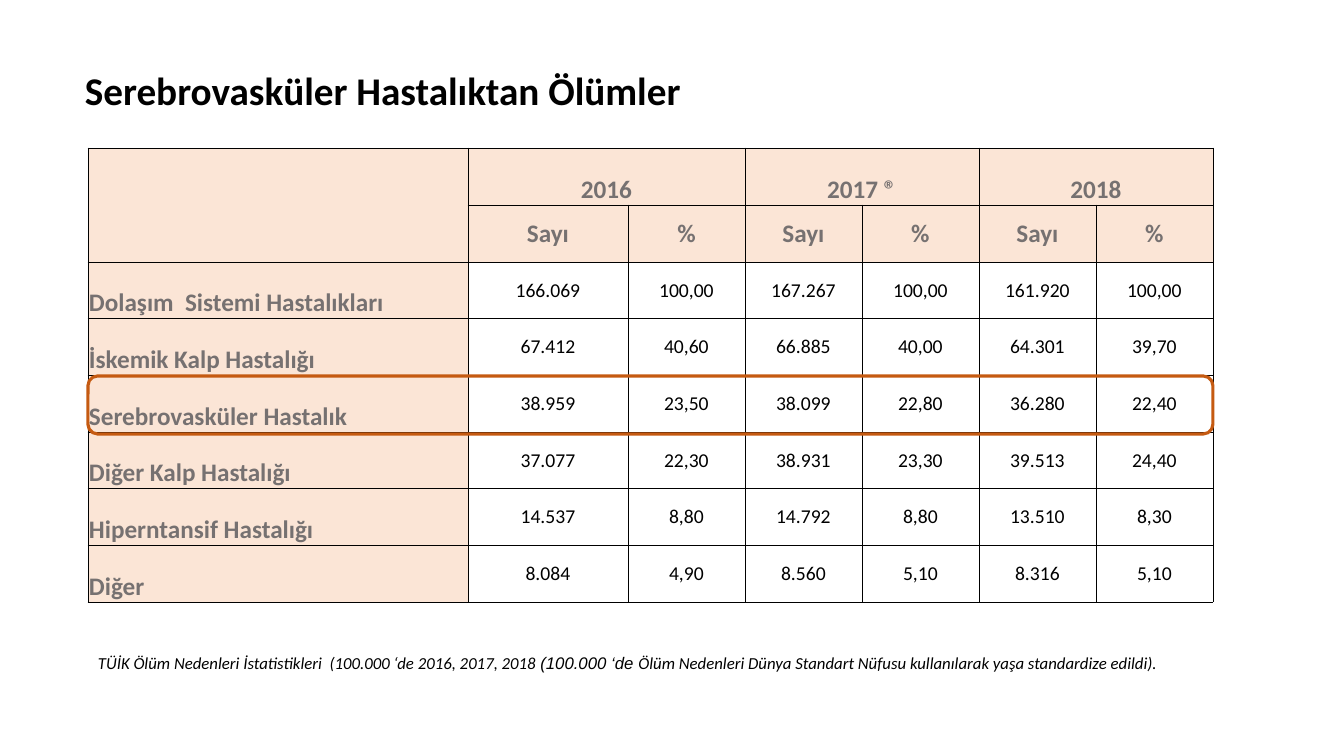
import pptx
import pptx.util
import pptx.dml.color
import pptx.enum.shapes
import pptx.enum.text
import pptx.oxml
import pptx.oxml.ns

THEME = {
    "font": "Calibri", "accent_font": "Arial",
    "ink": "000000", "label": "767171", "header_fill": "FBE5D6", "highlight": "C55A11",
    "title_size": 28, "label_size": 18, "value_size": 14, "note_size": 12,
    "highlight_width": 2.25, "border_width": 0.5,
}
PX = 914400 / 100.8
ALIGN = pptx.enum.text.PP_ALIGN
ANCHOR = pptx.enum.text.MSO_ANCHOR


def px(*lengths):
    """Turn pixel lengths into a list of EMU lengths."""
    return [pptx.util.Emu(round(length * PX)) for length in lengths]


def style(span, size, color, name=THEME["font"], bold=False, italic=False):
    font = span.font
    font.name, font.size = name, pptx.util.Pt(size)
    font.bold, font.italic = bold, italic
    font.color.rgb = pptx.dml.color.RGBColor.from_string(color)


deck = pptx.Presentation()
deck.slide_width, deck.slide_height = px(1344, 756)
page = deck.slides.add_slide(deck.slide_layouts[6])

# Title
title = page.shapes.add_textbox(*px(75, 67, 1008, 53)).text_frame
title.word_wrap = True
title.auto_size = pptx.enum.text.MSO_AUTO_SIZE.SHAPE_TO_FIT_TEXT
title.text = "Serebrovasküler Hastalıktan Ölümler"
title.paragraphs[0].line_spacing = 0.9
style(title.paragraphs[0].runs[0], THEME["title_size"], THEME["ink"], bold=True)

# Source note
note = page.shapes.add_textbox(*px(88, 648, 1085, 30)).text_frame
note.word_wrap = True
note.auto_size = pptx.enum.text.MSO_AUTO_SIZE.SHAPE_TO_FIT_TEXT
for text, name in [
    ("TÜİK Ölüm Nedenleri İstatistikleri  (100.000 ‘de 2016, 2017, 2018 ", THEME["font"]),
    ("(100.000 ‘de ", THEME["accent_font"]),
    ("Ölüm Nedenleri Dünya Standart Nüfusu kullanılarak yaşa standardize edildi).", THEME["font"]),
]:
    span = note.paragraphs[0].add_run()
    span.text = text
    style(span, THEME["note_size"], THEME["ink"], name, italic=True)

# Deaths by disease and year
rows = [
    ["", "2016", "", "2017 ®", "", "2018", ""],
    ["", "Sayı", "%", "Sayı", "%", "Sayı", "%"],
    ["Dolaşım  Sistemi Hastalıkları", "166.069", "100,00", "167.267", "100,00", "161.920", "100,00"],
    ["İskemik Kalp Hastalığı", "67.412", "40,60", "66.885", "40,00", "64.301", "39,70"],
    ["Serebrovasküler Hastalık", "38.959", "23,50", "38.099", "22,80", "36.280", "22,40"],
    ["Diğer Kalp Hastalığı", "37.077", "22,30", "38.931", "23,30", "39.513", "24,40"],
    ["Hiperntansif Hastalığı", "14.537", "8,80", "14.792", "8,80", "13.510", "8,30"],
    ["Diğer", "8.084", "4,90", "8.560", "5,10", "8.316", "5,10"],
]
column_widths = [380, 160] + [117] * 5
left, top, height = 88, 148, 454
row_edges = [round(height * index / len(rows)) for index in range(len(rows) + 1)]

table = page.shapes.add_table(
    len(rows), len(column_widths), *px(left, top, sum(column_widths), height)).table
table.first_row = table.horz_banding = False
for column, width in zip(table.columns, px(*column_widths)):
    column.width = width
for row, start, end in zip(table.rows, row_edges, row_edges[1:]):
    row.height = px(end - start)[0]

for row_index, texts in enumerate(rows):
    for column_index, text in enumerate(texts):
        cell = table.cell(row_index, column_index)
        is_label = row_index < 2 or column_index == 0
        cell.margin_left, cell.margin_right, cell.margin_top, cell.margin_bottom = px(1, 1, 1, 0)
        cell.vertical_anchor = ANCHOR.BOTTOM if row_index == 0 or column_index == 0 else ANCHOR.MIDDLE
        for side in ("lnL", "lnR", "lnT", "lnB"):
            cell._tc.get_or_add_tcPr().append(pptx.oxml.parse_xml(
                f'<a:{side} {pptx.oxml.ns.nsdecls("a")} w="{pptx.util.Pt(THEME["border_width"])}">'
                f'<a:solidFill><a:srgbClr val="{THEME["ink"]}"/></a:solidFill></a:{side}>'))
        if is_label:
            cell.fill.solid()
            cell.fill.fore_color.rgb = pptx.dml.color.RGBColor.from_string(THEME["header_fill"])
        else:
            cell.fill.background()
        if text:
            para = cell.text_frame.paragraphs[0]
            para.text = text
            para.alignment = ALIGN.LEFT if column_index == 0 else ALIGN.CENTER
            kind = ("label_size", "label") if is_label else ("value_size", "ink")
            style(para.runs[0], *[THEME[key] for key in kind], bold=is_label)

table.cell(0, 0).merge(table.cell(1, 0))
for year_column in (1, 3, 5):
    table.cell(0, year_column).merge(table.cell(0, year_column + 1))

# Frame around the cerebrovascular row
frame = page.shapes.add_shape(
    pptx.enum.shapes.MSO_SHAPE.ROUNDED_RECTANGLE,
    *px(left, top + row_edges[4] + 1, sum(column_widths), 58))
frame.shadow.inherit = False
frame.fill.background()
frame.line.color.rgb = pptx.dml.color.RGBColor.from_string(THEME["highlight"])
frame.line.width = pptx.util.Pt(THEME["highlight_width"])

deck.save("out.pptx")
